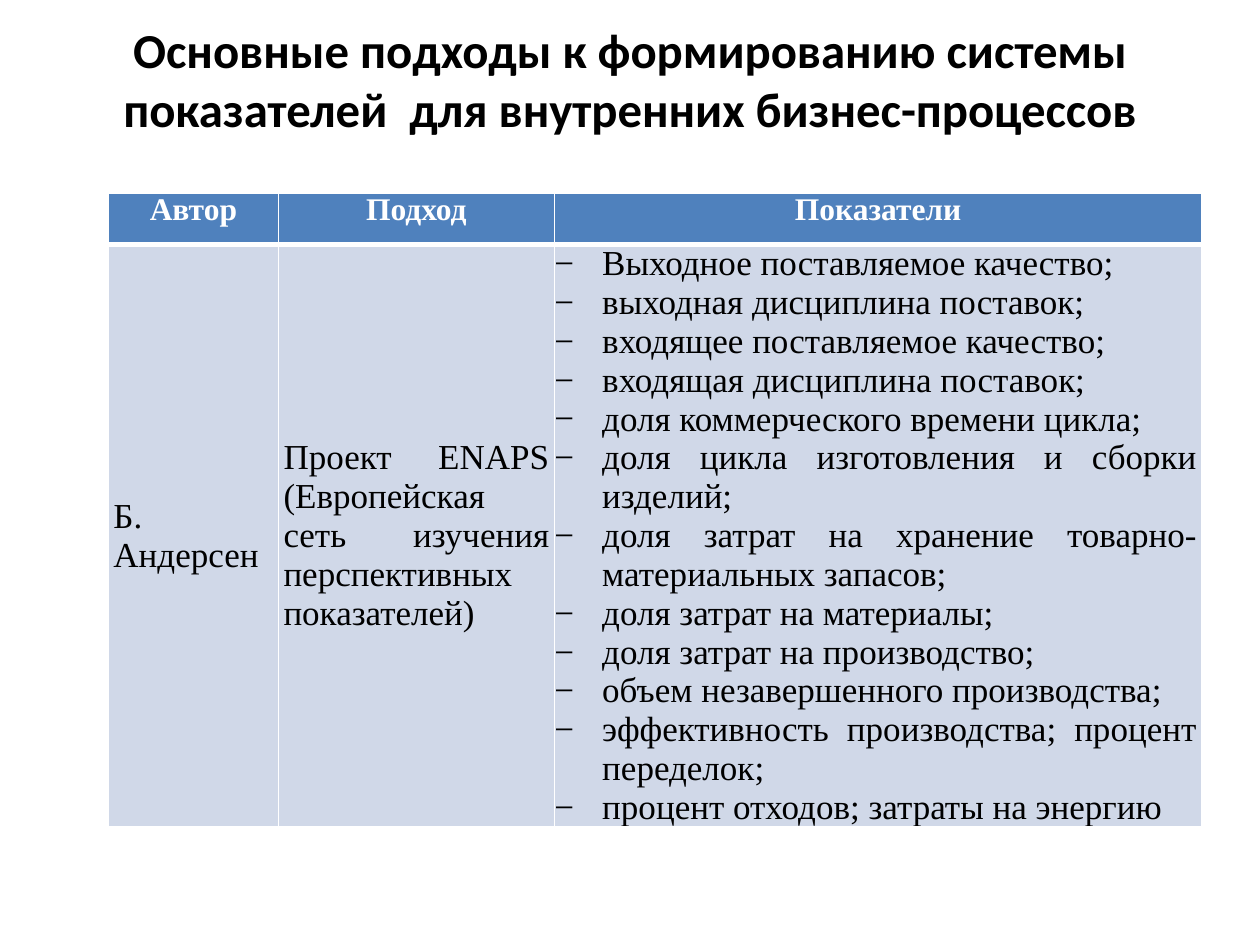
from lxml.etree import SubElement
from pptx import Presentation
from pptx.dml.color import RGBColor
from pptx.enum.text import MSO_ANCHOR, PP_ALIGN
from pptx.oxml.ns import qn
from pptx.util import Inches, Pt

BLACK = RGBColor(0x00, 0x00, 0x00)
WHITE = RGBColor(0xFF, 0xFF, 0xFF)
HEADER_BLUE = RGBColor(0x4F, 0x81, 0xBD)
BODY_BLUE = RGBColor(0xD0, 0xD8, 0xE8)

TITLE_FORMAT = {"name": "Calibri", "size": Pt(27.9), "bold": True}
HEADER_FORMAT = {"name": "Times New Roman", "size": Pt(18), "bold": True}
BODY_FORMAT = {"name": "Times New Roman", "size": Pt(20), "bold": False}

COLUMN_WIDTHS = [1.35, 2.19, 5.14]
ROW_HEIGHTS = [0.41, 4.6]
HEADERS = ["Автор", "Подход", "Показатели"]
AUTHOR = ["Б. Андерсен"]
APPROACH = ["Проект ENAPS (Европейская сеть \tизучения перспективных показателей)"]
INDICATORS = [
    "Выходное поставляемое качество;",
    "выходная дисциплина поставок;",
    "входящее поставляемое качество;",
    "входящая дисциплина поставок;",
    "доля коммерческого времени цикла;",
    "доля цикла изготовления и сборки изделий;",
    "доля затрат на хранение товарно-материальных запасов;",
    "доля затрат на материалы;",
    "доля затрат на производство;",
    "объем незавершенного производства;",
    "эффективность производства; процент переделок;",
    "процент отходов; затраты на энергию",
]


def write_paragraph(paragraph, text, font_format, color, alignment):
    paragraph.alignment = alignment
    run = paragraph.add_run()
    run.text = text
    for attribute, value in font_format.items():
        setattr(run.font, attribute, value)
    run.font.color.rgb = color


def style_cell(cell, fill_color, bottom_width):
    for side in ("left", "top", "right", "bottom"):
        setattr(cell, f"margin_{side}", 0)
        width = bottom_width if side == "bottom" else 1
        line = SubElement(cell._tc.get_or_add_tcPr(), qn(f"a:ln{side[0].upper()}"), w=str(Pt(width)))
        SubElement(SubElement(line, qn("a:solidFill")), qn("a:srgbClr"), val=str(WHITE))
    cell.fill.solid()
    cell.fill.fore_color.rgb = fill_color


presentation = Presentation()
presentation.slide_width, presentation.slide_height = Inches(10), Inches(7.5)
slide = presentation.slides.add_slide(presentation.slide_layouts[5])

# Title, raised within its box by the bottom margin
title = slide.shapes.title
title.left, title.top, title.width, title.height = [Inches(n) for n in (0.5, 0.3, 9, 1.25)]
frame = title.text_frame
frame.word_wrap = True
frame.vertical_anchor = MSO_ANCHOR.MIDDLE
frame.margin_top, frame.margin_bottom = 0, Inches(0.6)
write_paragraph(
    frame.paragraphs[0],
    "Основные подходы к формированию системы показателей  для внутренних бизнес-процессов",
    TITLE_FORMAT, BLACK, PP_ALIGN.CENTER,
)

# Table grid
table = slide.shapes.add_table(
    len(ROW_HEIGHTS), len(COLUMN_WIDTHS), Inches(0.86), Inches(1.53),
    Inches(sum(COLUMN_WIDTHS)), Inches(sum(ROW_HEIGHTS)),
).table
for column, width in zip(table.columns, COLUMN_WIDTHS):
    column.width = Inches(width)
for row, height in zip(table.rows, ROW_HEIGHTS):
    row.height = Inches(height)

# Header row
for cell, header in zip(table.rows[0].cells, HEADERS):
    style_cell(cell, HEADER_BLUE, 3)
    write_paragraph(cell.text_frame.paragraphs[0], header, HEADER_FORMAT, WHITE, PP_ALIGN.CENTER)

# Body row: two plain cells and a dashed list
for cell, lines in zip(table.rows[1].cells, [AUTHOR, APPROACH, INDICATORS]):
    style_cell(cell, BODY_BLUE, 1)
    is_list = lines is INDICATORS
    cell.vertical_anchor = MSO_ANCHOR.TOP if is_list else MSO_ANCHOR.MIDDLE
    for index, text in enumerate(lines):
        frame = cell.text_frame
        paragraph = frame.add_paragraph() if index else frame.paragraphs[0]
        write_paragraph(paragraph, text, BODY_FORMAT, BLACK, PP_ALIGN.JUSTIFY)
        properties = paragraph._p.get_or_add_pPr()
        properties.set("marL", str(Inches(0.38 if is_list else 0.04)))
        properties.set("marR", str(Inches(0.04)))
        properties.set("indent", str(Inches(-0.38 if is_list else 0)))
        if is_list:
            SubElement(properties, qn("a:buFont"), typeface="Times New Roman")
            SubElement(properties, qn("a:buChar"), char="−")
        elif "\t" in text:
            tabs = SubElement(properties, qn("a:tabLst"))
            SubElement(tabs, qn("a:tab"), pos=str(Inches(0.54)), algn="l")

presentation.save("out.pptx")
